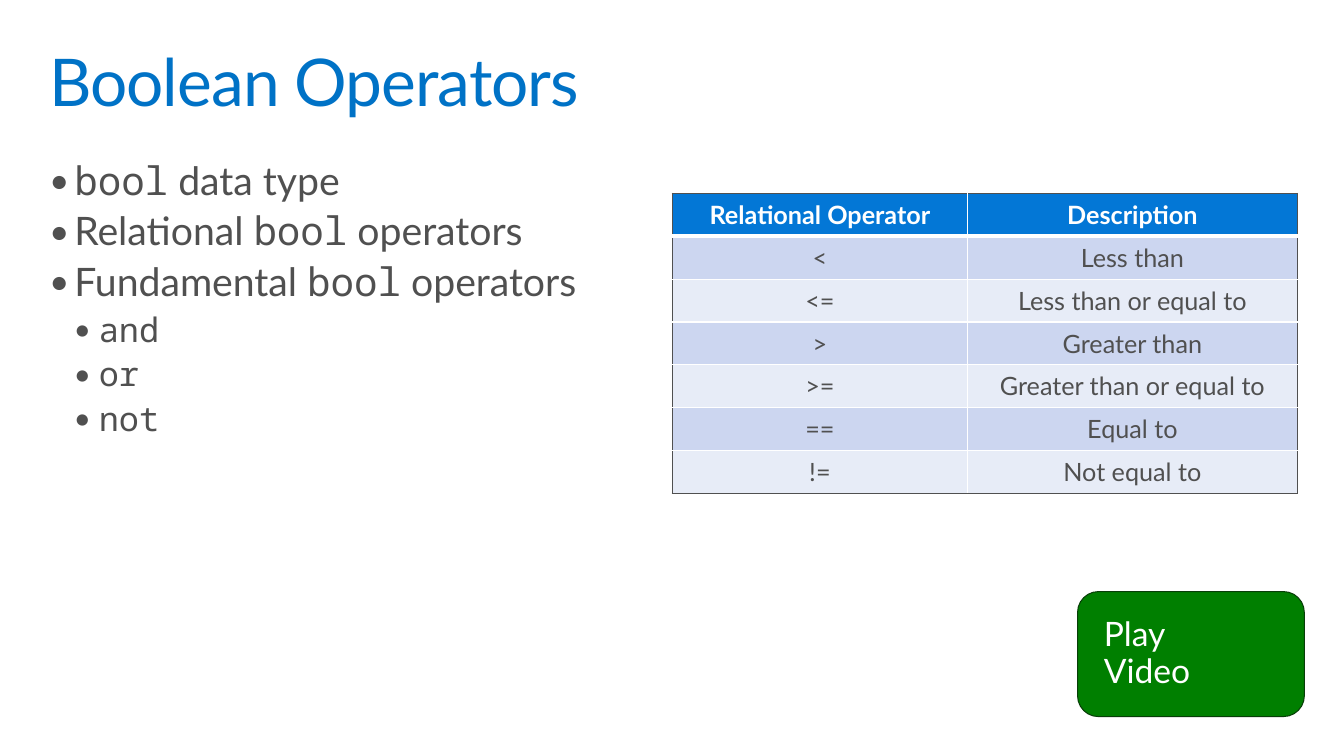
from dataclasses import dataclass

from lxml.etree import SubElement
from pptx import Presentation
from pptx.dml.color import RGBColor
from pptx.enum.shapes import MSO_SHAPE
from pptx.enum.text import MSO_ANCHOR, PP_ALIGN
from pptx.oxml.ns import qn
from pptx.util import Pt


@dataclass(frozen=True)
class Theme:
    sans: str = "Lato"
    mono: str = "Noto Sans Mono"
    text: str = "505050"
    title: str = "0072C6"
    white: str = "FFFFFF"
    header: str = "0377D6"
    bands: tuple = ("CCD6F0", "E7ECF7")
    button: str = "007F00"
    button_line: str = "083E08"
    title_size: float = 47
    bullet_sizes: tuple = (28, 24)
    table_size: float = 18
    button_size: float = 24
    line_spacing: float = 0.9


THEME = Theme()
MARGIN = 28
CONTENT_WIDTH = 904

# Each bullet is a level and its runs; True marks code.
BULLETS = [
    (0, [("bool", True), (" data type", False)]),
    (0, [("Relational ", False), ("bool", True), (" operators", False)]),
    (0, [("Fundamental ", False), ("bool", True), (" operators", False)]),
    (1, [("and", True)]),
    (1, [("or", True)]),
    (1, [("not", True)]),
]

OPERATORS = [
    ("Relational Operator", "Description"),
    ("<", "Less than"),
    ("<=", "Less than or equal to"),
    (">", "Greater than"),
    (">=", "Greater than or equal to"),
    ("==", "Equal to"),
    ("!=", "Not equal to"),
]


def color(value):
    return RGBColor.from_string(value)


def add_run(paragraph, text, size, fill, name=THEME.sans, bold=False):
    run = paragraph.add_run()
    run.text = text
    font = run.font
    font.name, font.size, font.bold = name, Pt(size), bold
    font.color.rgb = color(fill)
    return run


def set_margins(target, horizontal, vertical):
    target.margin_left = target.margin_right = Pt(horizontal)
    target.margin_top = target.margin_bottom = Pt(vertical)


def place(shape, left, top, width, height):
    shape.left, shape.top = Pt(left), Pt(top)
    shape.width, shape.height = Pt(width), Pt(height)


def add_title(slide, text):
    title = slide.shapes.title
    place(title, MARGIN, 28, CONTENT_WIDTH, 70.6)
    frame = title.text_frame
    frame.word_wrap = True
    frame.vertical_anchor = MSO_ANCHOR.TOP
    set_margins(frame, 7.2, 7.2)
    paragraph = frame.paragraphs[0]
    paragraph.alignment = PP_ALIGN.LEFT
    paragraph.line_spacing = THEME.line_spacing
    run = add_run(paragraph, text, THEME.title_size, THEME.title)
    run.font._element.set("spc", "-70")


def add_bullet(paragraph, level):
    properties = paragraph._p.get_or_add_pPr()
    properties.set("marL", str(Pt(18 if level == 0 else 35.5)))
    properties.set("indent", str(-Pt(18)))
    SubElement(properties, qn("a:buSzPct"), val="90000")
    SubElement(properties, qn("a:buFont"), typeface=THEME.sans)
    SubElement(properties, qn("a:buChar"), char="•")


def add_bullets(slide, bullets):
    box = slide.shapes.add_textbox(Pt(MARGIN), Pt(108), Pt(CONTENT_WIDTH), Pt(215))
    frame = box.text_frame
    frame.word_wrap = True
    set_margins(frame, 7.2, 7.2)
    for index, (level, runs) in enumerate(bullets):
        paragraph = frame.add_paragraph() if index else frame.paragraphs[0]
        add_bullet(paragraph, level)
        paragraph.level = level
        paragraph.line_spacing = THEME.line_spacing
        paragraph.space_before = Pt(5.9 if index else 0)
        for text, is_code in runs:
            add_run(paragraph, text, THEME.bullet_sizes[level], THEME.text,
                    THEME.mono if is_code else THEME.sans)


def add_border(cell, side, fill, width):
    line = SubElement(cell._tc.get_or_add_tcPr(), qn(f"a:ln{side}"), w=str(Pt(width)))
    SubElement(SubElement(line, qn("a:solidFill")), qn("a:srgbClr"), val=fill)


def add_operator_table(slide, rows):
    """Dark lines frame the table; white lines divide its cells."""
    widths, row_height = (211, 235.4), 30.1
    table = slide.shapes.add_table(len(rows), len(widths), Pt(480.2), Pt(138.2),
                                   Pt(sum(widths)), Pt(row_height * len(rows))).table
    for column, width in zip(table.columns, widths):
        column.width = Pt(width)
    last_row, last_column = len(rows) - 1, len(widths) - 1
    for row, texts in enumerate(rows):
        table.rows[row].height = Pt(row_height)
        is_header = row == 0
        for column, text in enumerate(texts):
            cell = table.cell(row, column)
            edges = {"L": column == 0, "R": column == last_column,
                     "T": is_header, "B": row == last_row}
            for side, is_outer in edges.items():
                add_border(cell, side, THEME.text if is_outer else THEME.white,
                           3 if is_header and side == "B" else 1)
            cell.fill.solid()
            cell.fill.fore_color.rgb = color(
                THEME.header if is_header else THEME.bands[(row - 1) % 2])
            cell.vertical_anchor = MSO_ANCHOR.MIDDLE
            set_margins(cell, 21.6, 4.5)
            paragraph = cell.text_frame.paragraphs[0]
            paragraph.alignment = PP_ALIGN.CENTER
            add_run(paragraph, text, THEME.table_size,
                    THEME.white if is_header else THEME.text, bold=is_header)


def add_button(slide, lines):
    button = slide.shapes.add_shape(MSO_SHAPE.ROUNDED_RECTANGLE,
                                    Pt(769.7), Pt(422.6), Pt(162), Pt(89.3))
    button.shadow.inherit = False
    button.fill.solid()
    button.fill.fore_color.rgb = color(THEME.button)
    button.line.color.rgb = color(THEME.button_line)
    button.line.width = Pt(0.75)
    frame = button.text_frame
    frame.word_wrap = True
    frame.vertical_anchor = MSO_ANCHOR.MIDDLE
    set_margins(frame, 14.4, 11.5)
    paragraph = frame.paragraphs[0]
    paragraph.alignment = PP_ALIGN.LEFT
    paragraph.line_spacing = THEME.line_spacing
    for index, text in enumerate(lines):
        if index:
            paragraph.add_line_break()
        add_run(paragraph, text, THEME.button_size, THEME.white)


def main():
    presentation = Presentation()
    presentation.slide_width, presentation.slide_height = Pt(960), Pt(540)
    slide = presentation.slides.add_slide(presentation.slide_layouts[5])
    add_title(slide, "Boolean Operators")
    add_bullets(slide, BULLETS)
    add_button(slide, ["Play ", "Video"])
    add_operator_table(slide, OPERATORS)
    presentation.save("out.pptx")


if __name__ == "__main__":
    main()
